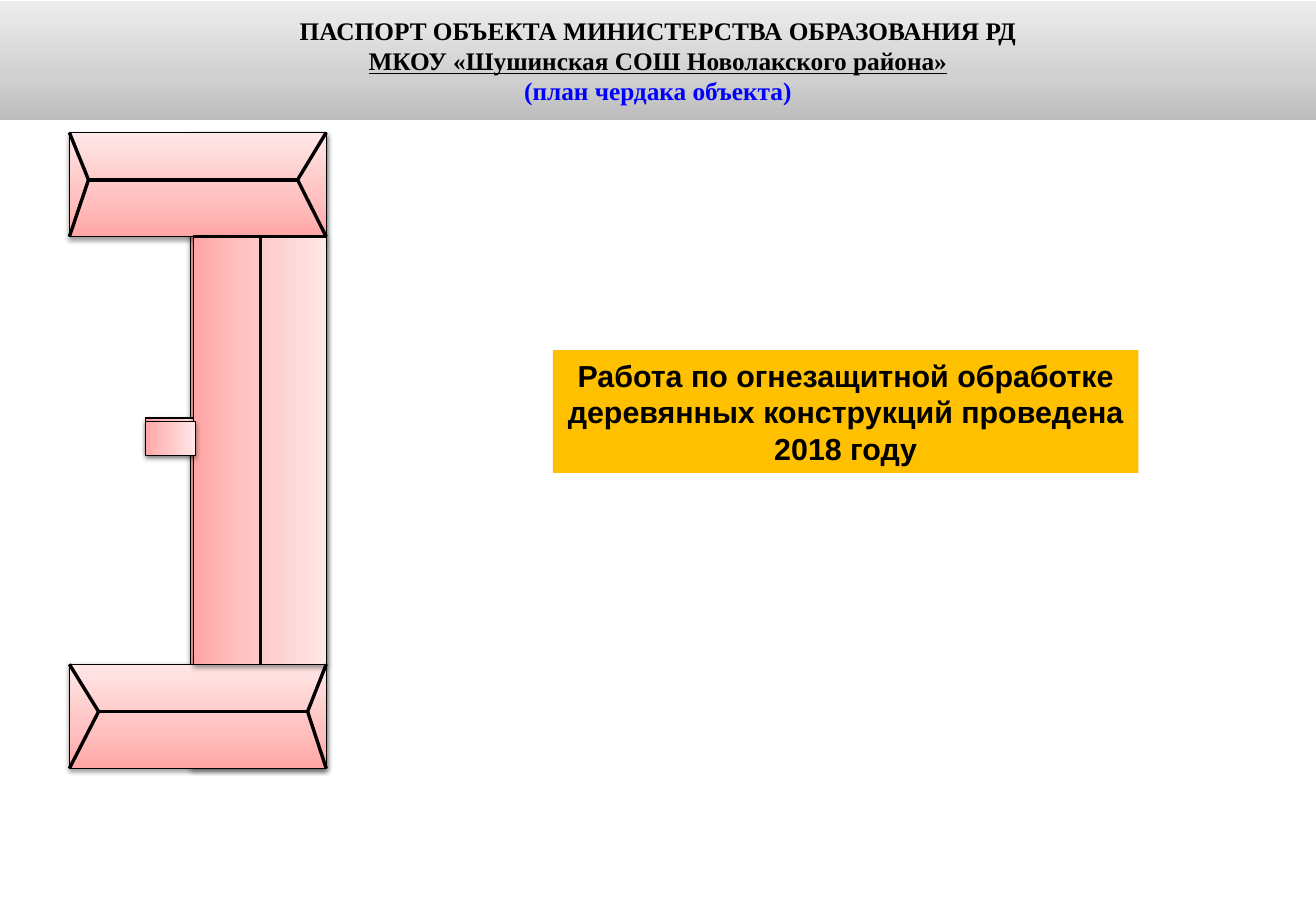
from copy import deepcopy
from dataclasses import dataclass
from lxml.etree import SubElement as Sub
from pptx import Presentation
from pptx.dml.color import RGBColor as Rgb
from pptx.enum.shapes import MSO_CONNECTOR as Link, MSO_SHAPE as Form
from pptx.enum.text import MSO_ANCHOR as Anchor, MSO_AUTO_SIZE as Fit, PP_ALIGN as Align
from pptx.oxml.ns import qn
from pptx.util import Cm, Pt


@dataclass(frozen=True)
class Theme:
    black: str = "000000"
    blue: str = "0000FF"
    amber: str = "FFC000"
    steel: tuple = ((0, "BCBCBC"), (0.35, "D0D0D0"), (1, "EDEDED"))
    roof: tuple = ((0, "FFA6A5"), (0.35, "FFC0BF"), (1, "FFE7E7"))
    serif: str = "Times New Roman"
    sans: str = "Arial"
    head: int = 15
    note: int = 18


def put(obj, **vals):
    for key, val in vals.items():
        setattr(obj, key, val)


class Plan:
    def __init__(self, deck, theme):
        self.theme = theme
        self.slide = deck.slides.add_slide(deck.slide_layouts[5])

    def place(self, shape, box):
        put(shape, **dict(zip(("left", "top", "width", "height"), map(Cm, box))))

    def blend(self, shape, stops, angle):
        fill = shape.fill
        fill.gradient()
        fill.gradient_angle = angle
        marks = shape._element.spPr.find(qn("a:gradFill")).find(qn("a:gsLst"))
        marks.append(deepcopy(marks[-1]))
        for mark, (pos, color) in zip(fill.gradient_stops, stops):
            mark.position = pos
            mark.color.rgb = Rgb.from_string(color)

    def stroke(self, shape):
        shape.line.color.rgb = Rgb.from_string(self.theme.black)
        shape.line.width = Pt(0)

    def label(self, shape, lines, font, size):
        frame = shape.text_frame
        put(frame, word_wrap=True, auto_size=Fit.NONE, vertical_anchor=Anchor.MIDDLE,
            margin_left=Cm(0.25), margin_right=Cm(0.25),
            margin_top=Cm(0.13), margin_bottom=Cm(0.13))
        for num, (text, color, under) in enumerate(lines):
            par = frame.add_paragraph() if num else frame.paragraphs[0]
            put(par, alignment=Align.CENTER, space_before=Pt(0), line_spacing=1.0)
            run = par.add_run()
            run.text = text
            put(run.font, name=font, size=Pt(size), bold=True, underline=under)
            run.font.color.rgb = Rgb.from_string(color)

    def title(self, box, lines):
        shape = self.slide.shapes.title
        self.place(shape, box)
        self.blend(shape, self.theme.steel, 90)
        self.label(shape, lines, self.theme.serif, self.theme.head)

    def note(self, box, text):
        shape = self.slide.shapes.add_textbox(*map(Cm, box))
        shape.fill.solid()
        shape.fill.fore_color.rgb = Rgb.from_string(self.theme.amber)
        self.label(shape, [(text, self.theme.black, False)], self.theme.sans, self.theme.note)

    def roof(self, box, angle):
        shape = self.slide.shapes.add_shape(Form.RECTANGLE, *map(Cm, box))
        shape.shadow.inherit = False
        self.blend(shape, self.theme.roof, angle)
        self.stroke(shape)
        glow = shape._element.spPr.find(qn("a:effectLst"))
        cast = Sub(glow, qn("a:outerShdw"), blurRad=str(Pt(3.1)), dist=str(Pt(1.6)),
                   dir="5400000", rotWithShape="0")
        tint = Sub(cast, qn("a:srgbClr"), val=self.theme.black)
        Sub(tint, qn("a:alpha"), val="38000")

    def edge(self, start, end):
        line = self.slide.shapes.add_connector(Link.STRAIGHT, *map(Cm, start + end))
        self.stroke(line)
        Sub(line._element.spPr, qn("a:effectLst"))


def main():
    theme = Theme()
    deck = Presentation()
    put(deck, slide_width=Cm(27.51), slide_height=Cm(19.05))
    plan = Plan(deck, theme)

    # Header
    plan.title((0, 0.02, 27.51, 2.49), [
        ("ПАСПОРТ ОБЪЕКТА МИНИСТЕРСТВА ОБРАЗОВАНИЯ РД", theme.black, False),
        ("МКОУ «Шушинская СОШ Новолакского района»", theme.black, True),
        ("(план чердака объекта)", theme.blue, False)])

    # Building outline
    west, east, high = 1.45, 6.82, 2.18
    tops = (2.77, 13.89)
    ridges = ((1.85, 6.22), (2.06, 6.43))
    hall, mid = 4.04, 5.44
    north, south = tops[0] + high, tops[1]

    # Lower roof layer and porch
    plan.roof((3.99, tops[0], 2.84, 13.28), 0)
    plan.roof((3.05, 8.74, 1.04, 0.71), 0)

    # Treatment note
    plan.note((11.56, 7.32, 12.24, 2.57),
              "Работа по огнезащитной обработке деревянных конструкций проведена 2018 году")

    # Wings
    for top in tops:
        plan.roof((west, top, east - west, high), 90)

    # Hall and porch
    plan.roof((hall, north, 2.79, south - north), 0)
    plan.roof((3.05, 8.81, 1.04, 0.71), 0)
    plan.edge((mid, north), (mid, south))
    plan.edge((hall, north), (east, north))

    # Ridges and hips of the wings
    for top, (left, right) in zip(tops, ridges):
        ridge, base = top + 0.99, top + high
        plan.edge((left, ridge), (right, ridge))
        for inner, outer in ((left, west), (right, east)):
            for level in (top, base):
                plan.edge((inner, ridge), (outer, level))

    deck.save("out.pptx")


if __name__ == "__main__":
    main()
